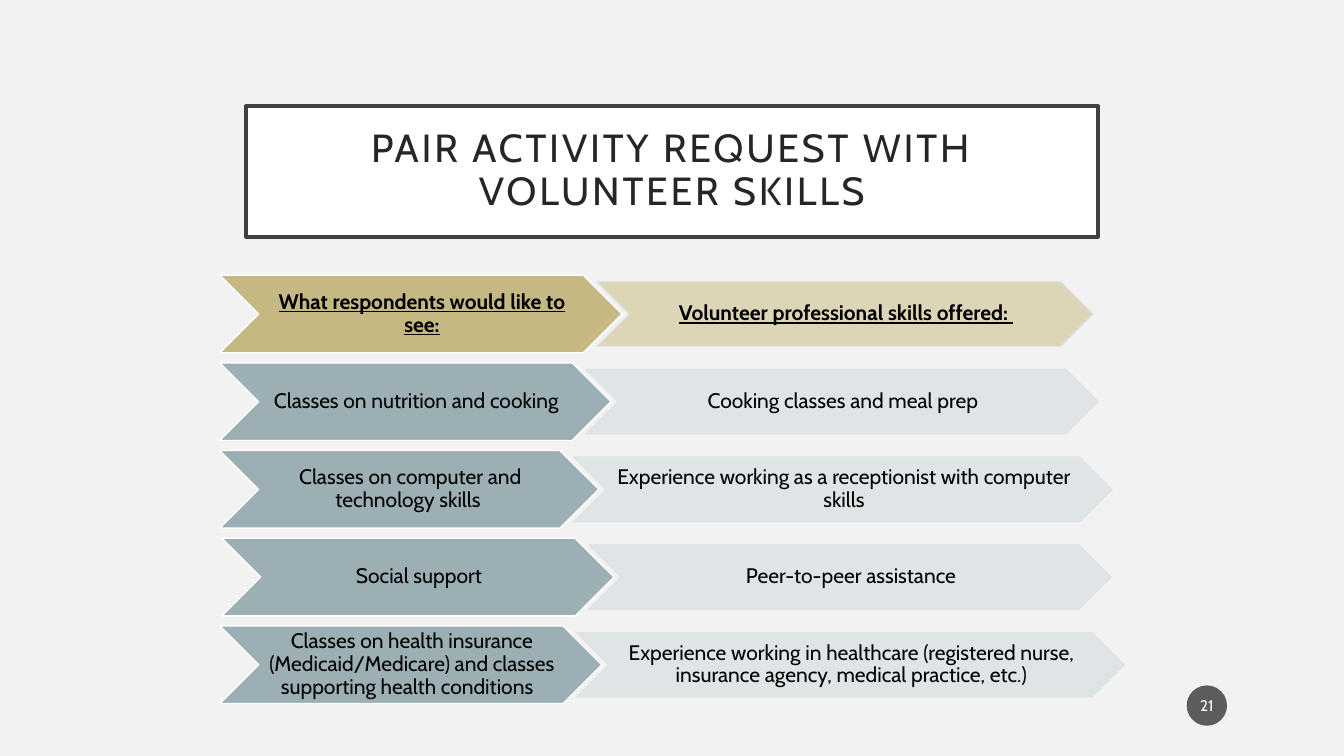
from dataclasses import dataclass

from lxml.etree import SubElement
from pptx import Presentation
from pptx.dml.color import RGBColor
from pptx.enum.shapes import MSO_SHAPE
from pptx.enum.text import MSO_ANCHOR, MSO_AUTO_SIZE, PP_ALIGN
from pptx.oxml.ns import qn
from pptx.shapes.autoshape import Shape
from pptx.slide import Slide
from pptx.util import Inches, Pt


@dataclass(frozen=True)
class Theme:
    font: str = "Cabin"
    background: str = "F2F2F2"
    white: str = "FFFFFF"
    black: str = "000000"
    title_text: str = "262626"
    title_border: str = "404040"
    badge: str = "1D1D1D"
    gold: str = "C5B883"
    pale_gold: str = "DAD2B0"
    slate: str = "9BAFB5"
    pale_slate: str = "DEE3E5"
    title_size: float = 28
    body_size: float = 15
    badge_size: float = 11


@dataclass(frozen=True)
class Box:
    left: float
    top: float
    width: float
    height: float


@dataclass(frozen=True)
class Pairing:
    request: str
    request_width: float
    offer: str
    offer_width: float
    left: float = 2.18
    heading: bool = False


THEME = Theme()
FIRST_TOP = 2.73
ROW_PITCH = 0.87
REQUEST_HEIGHT = 0.77
OFFER_HEIGHT = 0.64
OVERLAP = 0.25
CHEVRON_INSETS = (0.02, 0.01, 0, 0.01)

PAIRINGS = [
    Pairing("What respondents would like to see:", 3.99,
            "Volunteer professional skills offered: ", 4.92, heading=True),
    Pairing("Classes on nutrition and cooking", 3.88,
            "Cooking classes and meal prep", 5.08),
    Pairing("Classes on computer and technology skills ", 3.76,
            "Experience working as a receptionist with computer skills", 5.34),
    Pairing("Social support", 3.89, "Peer-to-peer assistance", 5.18, left=2.2),
    Pairing("Classes on health insurance (Medicaid/Medicare) and classes "
            "supporting health conditions  ", 3.79,
            "Experience working in healthcare (registered nurse, insurance "
            "agency, medical practice, etc.)", 5.43),
]


def place(shape: Shape, box: Box) -> None:
    shape.left, shape.top = Inches(box.left), Inches(box.top)
    shape.width, shape.height = Inches(box.width), Inches(box.height)


def paint(shape: Shape, fill: str, line: str | None = None,
          line_width: float = 1, opacity: int = 100) -> None:
    shape.fill.solid()
    shape.fill.fore_color.rgb = RGBColor.from_string(fill)
    if line:
        shape.line.color.rgb = RGBColor.from_string(line)
        shape.line.width = Pt(line_width)
    else:
        shape.line.fill.background()
    if opacity < 100:
        for color in shape.element.spPr.iter(qn("a:srgbClr")):
            SubElement(color, qn("a:alpha"), val=str(opacity * 1000))


def write(shape: Shape, text: str, size: float, color: str,
          insets: tuple[float, float, float, float],
          line_spacing: float = 0.9, emphasis: bool = False) -> None:
    frame = shape.text_frame
    frame.text = text
    frame.word_wrap = True
    frame.auto_size = MSO_AUTO_SIZE.NONE
    frame.vertical_anchor = MSO_ANCHOR.MIDDLE
    frame.margin_left, frame.margin_top, frame.margin_right, frame.margin_bottom = map(Inches, insets)
    paragraph = frame.paragraphs[0]
    paragraph.alignment = PP_ALIGN.CENTER
    paragraph.line_spacing = line_spacing
    font = paragraph.runs[0].font
    font.name = THEME.font
    font.size = Pt(size)
    font.color.rgb = RGBColor.from_string(color)
    font.bold = font.underline = emphasis


def add_preset(slide: Slide, preset: MSO_SHAPE, box: Box) -> Shape:
    shape = slide.shapes.add_shape(preset, 0, 0, 0, 0)
    place(shape, box)
    shape.shadow.inherit = False
    return shape


def add_title(slide: Slide) -> None:
    title = slide.shapes.title
    place(title, Box(2.44, 1.05, 8.45, 1.3))
    paint(title, THEME.white, THEME.title_border, 2.5)
    write(title, "PAIR ACTIVITY REQUEST WITH VOLUNTEER SKILLS",
          THEME.title_size, THEME.title_text, (0.2, 0.2, 0.2, 0.2))
    run = title.text_frame.paragraphs[0].runs[0]
    run.font._element.set("spc", "200")


def add_pairing(slide: Slide, pairing: Pairing, top: float) -> None:
    request = add_preset(slide, MSO_SHAPE.CHEVRON, Box(
        pairing.left, top, pairing.request_width, REQUEST_HEIGHT))
    paint(request, THEME.gold if pairing.heading else THEME.slate, THEME.white)

    offer = add_preset(slide, MSO_SHAPE.CHEVRON, Box(
        pairing.left + pairing.request_width - OVERLAP,
        top + (REQUEST_HEIGHT - OFFER_HEIGHT) / 2,
        pairing.offer_width, OFFER_HEIGHT))
    paint(offer, THEME.pale_gold if pairing.heading else THEME.pale_slate,
          THEME.pale_slate, opacity=90)

    for chevron, text in ((request, pairing.request), (offer, pairing.offer)):
        write(chevron, text, THEME.body_size, THEME.black, CHEVRON_INSETS,
              emphasis=pairing.heading)


def add_page_badge(slide: Slide) -> None:
    badge = add_preset(slide, MSO_SHAPE.OVAL, Box(11.77, 6.8, 0.4, 0.4))
    paint(badge, THEME.badge, opacity=70)
    write(badge, "21", THEME.badge_size, THEME.white,
          (0.02, 0.05, 0.02, 0.05), line_spacing=1.0)
    badge.text_frame.word_wrap = False


def main() -> None:
    deck = Presentation()
    deck.slide_width, deck.slide_height = Inches(13.33), Inches(7.5)
    slide = deck.slides.add_slide(deck.slide_layouts.get_by_name("Title Only"))
    slide.background.fill.solid()
    slide.background.fill.fore_color.rgb = RGBColor.from_string(THEME.background)
    add_title(slide)
    for row, pairing in enumerate(PAIRINGS):
        add_pairing(slide, pairing, FIRST_TOP + row * ROW_PITCH)
    add_page_badge(slide)
    deck.save("out.pptx")


if __name__ == "__main__":
    main()
